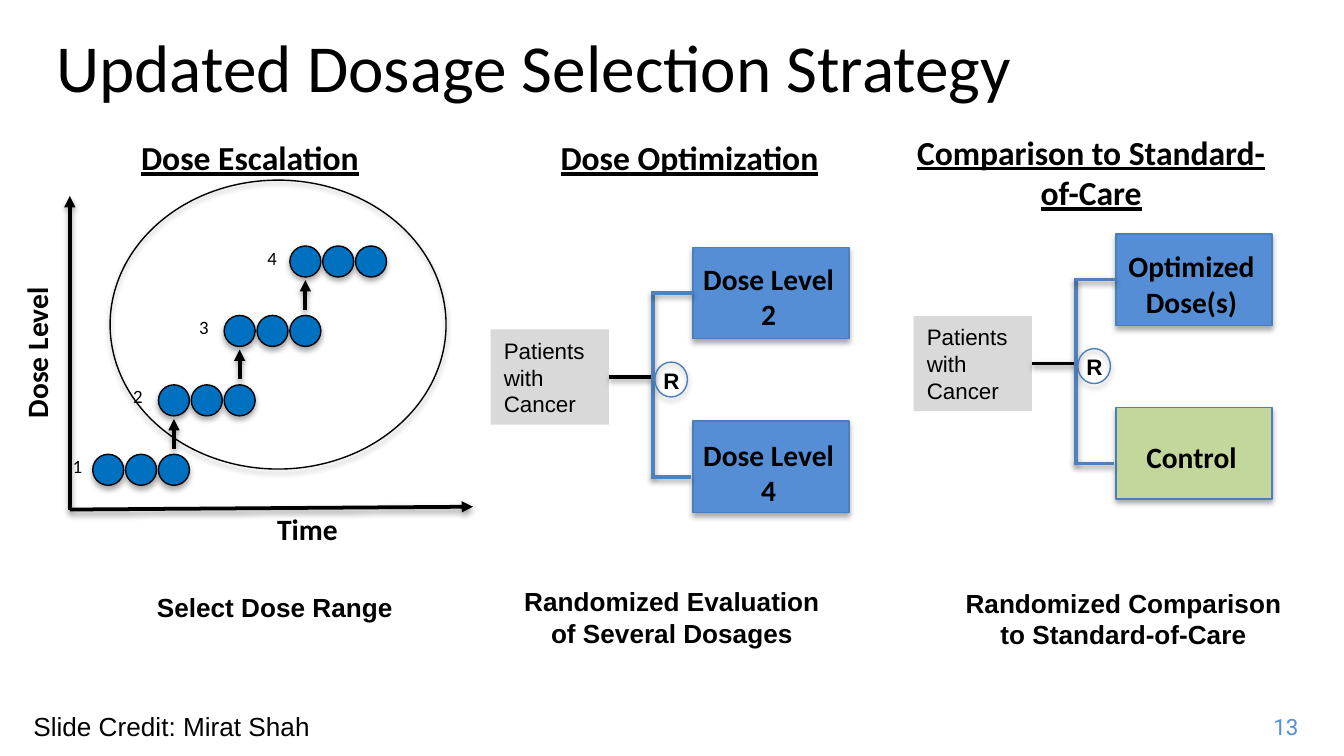
from pptx import Presentation
from pptx.dml.color import RGBColor
from pptx.enum.shapes import MSO_CONNECTOR as Line, MSO_SHAPE as Shape
from pptx.enum.text import MSO_ANCHOR as Anchor, PP_ALIGN as Align
from pptx.oxml.ns import qn
from pptx.util import Pt
from lxml.etree import SubElement

BLACK, BLUE, DOT, GREEN, GRAY = "000000", "558ED5", "0070C0", "C3D69B", "D9D9D9"
EDGE, BRACKET = "4B7EBC", "4F81BD"
LEFT, RIGHT = 1, 3


def color(code):
    return RGBColor.from_string(code)


def cast_shadow(effects, distance, opacity):
    shadow = SubElement(effects, qn("a:outerShdw"), blurRad=str(Pt(3.1)),
                        dist=str(Pt(distance)), dir="5400000", rotWithShape="0")
    tint = SubElement(shadow, qn("a:srgbClr"), val=BLACK)
    SubElement(tint, qn("a:alpha"), val=str(opacity * 1000))


class Deck:
    """Holds the style and the current slide, and draws each kind of element."""

    head_font, body_font, number_font = "Calibri", "Arial", "Roboto"

    def __init__(self, width, height):
        self.show = Presentation()
        self.show.slide_width, self.show.slide_height = Pt(width), Pt(height)
        self.slide = self.show.slides.add_slide(self.show.slide_layouts[6])

    def add_words(self, frame, words, size, font, bold=False, underline=False,
                  align=Align.LEFT, ink=BLACK):
        paragraph = frame.paragraphs[0]
        paragraph.alignment = align
        run = paragraph.add_run()
        run.text = words
        run.font.name, run.font.size = font, Pt(size)
        run.font.bold, run.font.underline = bold, underline
        run.font.color.rgb = color(ink)

    def text(self, words, left, top, width, height, size=14, font=None,
             wrap=True, **style):
        box = self.slide.shapes.add_textbox(Pt(left), Pt(top), Pt(width), Pt(height))
        box.text_frame.word_wrap = wrap
        self.add_words(box.text_frame, words, size, font or self.body_font, **style)
        return box

    def bold_label(self, words, left, top, width, height=26.6, size=15.8, font=None,
                   underline=False):
        return self.text(words, left, top, width, height, size, font or self.head_font,
                         bold=True, underline=underline, align=Align.CENTER)

    def shape(self, kind, left, top, width, height, fill=None, edge=None):
        item = self.slide.shapes.add_shape(kind, Pt(left), Pt(top), Pt(width), Pt(height))
        item.shadow.inherit = False
        if fill:
            item.fill.solid()
            item.fill.fore_color.rgb = color(fill)
        else:
            item.fill.background()
        if edge:
            item.line.color.rgb = color(edge)
            item.line.width = Pt(0.75)
            cast_shadow(item._element.spPr.find(qn("a:effectLst")), 1.8, 35)
        else:
            item.line.fill.background()
        return item

    def line(self, x1, y1, x2, y2, ink=BLACK, arrow=False):
        link = self.slide.shapes.add_connector(Line.STRAIGHT, Pt(x1), Pt(y1), Pt(x2), Pt(y2))
        link.line.color.rgb = color(ink)
        link.line.width = Pt(2)
        properties = link._element.spPr
        if arrow:
            SubElement(properties.find(qn("a:ln")), qn("a:tailEnd"), type="triangle")
        cast_shadow(SubElement(properties, qn("a:effectLst")), 1.6, 38)
        return link

    def escalation(self):
        self.line(37.4, 273, 37.4, 105, arrow=True)
        self.line(37.4, 273, 253.4, 271.5, arrow=True)
        self.bold_label("Time", 112.3, 270, 105)
        self.bold_label("Dose Level", -39.6, 175.7, 118.8).rotation = 270
        size = 16.6
        for level, label_left in enumerate((38.9, 71.3, 106.6, 143.3)):
            left, top = 49.7 + 35.2 * level, 243.4 - 37.2 * level
            for patient in range(3):
                self.shape(Shape.OVAL, left + 17.6 * patient, top, size, size, DOT, BLACK)
            if level < 3:
                next_center = left + 35.2 + size / 2
                self.line(next_center, top - 2.9, next_center, top - 18.9, arrow=True)
            number = self.text(str(level + 1), label_left, top - 3.4, 6.5, 19.4, 10.1,
                               self.head_font, wrap=False)
            number.text_frame.margin_left = number.text_frame.margin_right = 0
        self.shape(Shape.OVAL, 59, 96.5, 180, 154.8, edge=BLACK)

    def trial(self, left, top, arms):
        arm_left, fork, middle = left + 108.5, left + 87, top + 69.5
        boxes = [self.shape(Shape.RECTANGLE, arm_left, top + 93 * row, 83.5, 49, fill, EDGE)
                 for row, (_, fill, _) in enumerate(arms)]
        patients = self.shape(Shape.RECTANGLE, left, top + 44, 63.4, 51, GRAY)
        patients.text_frame.word_wrap = True
        self.add_words(patients.text_frame, "Patients with Cancer", 12, self.body_font)
        self.line(left + 63.4, middle, fork, middle).begin_connect(patients, RIGHT)
        self.line(fork, top + 24.5, fork, top + 123, BRACKET)
        self.line(fork - 1, top + 123, arm_left - 1, top + 123, BRACKET)
        self.line(fork - 1, top + 24.5, arm_left, top + 24.5, BRACKET).end_connect(boxes[0], LEFT)
        for row, (name, _, drop) in enumerate(arms):
            self.bold_label(name, arm_left - 2.7, top + 93 * row + drop, 86.4)
        self.text("R", fork - 1.5, top + 60.5, 28, 21.6, 12, bold=True)
        self.shape(Shape.OVAL, fork + 1, top + 61.5, 17.5, 18.7, edge=EDGE)


def main():
    deck = Deck(720, 405)
    title = deck.text("Updated Dosage Selection Strategy", 25.2, 7.9, 670.3, 54.7, 36,
                      deck.head_font).text_frame
    title.vertical_anchor = Anchor.MIDDLE
    title.margin_left = title.margin_right = Pt(5)
    title.margin_top = title.margin_bottom = Pt(3)

    for heading, left, top in (("Dose Escalation", 33.1, 69.8),
                               ("Dose Optimization", 268.6, 69.8),
                               ("Comparison to Standard-of-Care", 483.8, 67)):
        deck.bold_label(heading, left, top, 201.6, 44, 18, underline=True)

    deck.escalation()
    deck.trial(262.8, 132.5, (("Dose Level 2", BLUE, 3.6), ("Dose Level 4", BLUE, 5)))
    deck.trial(489.4, 125.3, (("Optimized Dose(s)", BLUE, 4.3), ("Control", GREEN, 13.6)))

    for goal, left, top, width in (
            ("Select Dose Range", 67.7, 313.2, 159.1),
            ("Randomized Evaluation of Several Dosages", 273.6, 310.3, 172.8),
            ("Randomized Comparison to Standard-of-Care", 508.3, 311, 187.2)):
        deck.bold_label(goal, left, top, width, 41, 14, deck.body_font)

    deck.text("Slide Credit: Mirat Shah", 10.8, 377.3, 163.4, 24.5, wrap=False)
    deck.text("13", 673.2, 378.7, 29.5, 21.6, 12, deck.number_font, wrap=False,
              align=Align.RIGHT, ink=BLUE)
    deck.show.save("out.pptx")


if __name__ == "__main__":
    main()
